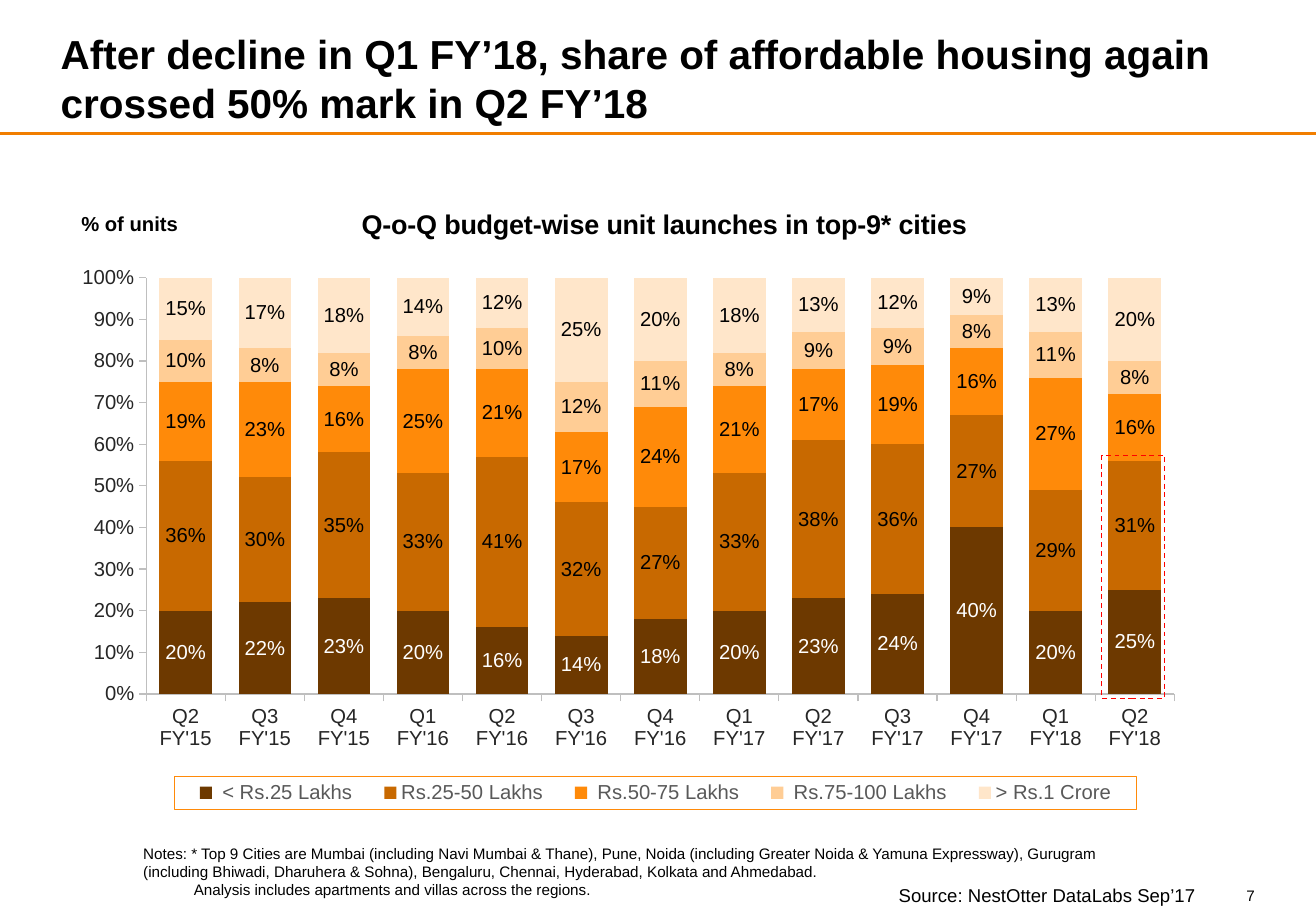
from lxml import etree
from pptx import Presentation
from pptx import util as u
from pptx.chart import data as chart_data
from pptx.dml.color import RGBColor
from pptx.enum import chart as charts, dml, shapes, text
from pptx.oxml import parse_xml
from pptx.oxml.ns import nsdecls, qn

COLORS = {
    "black": "000000", "white": "FFFFFF", "accent": "F17E00", "legend_line": "FF8A09",
    "axis_text": "262626", "axis_line": "BFBFBF", "legend_text": "595959", "highlight": "FF0000",
    "under_25": "6D3900", "from_25": "C86900", "from_50": "FF8A09", "from_75": "FFCD95", "crore": "FFE6CA",
}
QUARTERS = [f"Q{i % 4 + 1}\nFY'{15 + i // 4}" for i in range(1, 14)]
BUDGETS = [
    (" < Rs.25 Lakhs", "under_25", "white", [20, 22, 23, 20, 16, 14, 18, 20, 23, 24, 40, 20, 25]),
    ("Rs.25-50 Lakhs", "from_25", "black", [36, 30, 35, 33, 41, 32, 27, 33, 38, 36, 27, 29, 31]),
    (" Rs.50-75 Lakhs", "from_50", "black", [19, 23, 16, 25, 21, 17, 24, 21, 17, 19, 16, 27, 16]),
    (" Rs.75-100 Lakhs", "from_75", "black", [10, 8, 8, 8, 10, 12, 11, 8, 9, 9, 8, 11, 8]),
    ("> Rs.1 Crore", "crore", "black", [15, 17, 18, 14, 12, 25, 20, 18, 13, 12, 9, 13, 20]),
]
NOTES = [
    "Notes: * Top 9 Cities are Mumbai (including Navi Mumbai & Thane), Pune, Noida (including Greater Noida "
    "& Yamuna Expressway), Gurugram (including Bhiwadi, Dharuhera & Sohna), Bengaluru, Chennai, Hyderabad, "
    "Kolkata and Ahmedabad.",
    "Analysis includes apartments and villas across the regions.",
]


def rgb(name):
    """Return the named colour."""
    return RGBColor.from_string(COLORS[name])


def style_font(font, size, color="black", bold=False):
    """Format a font in the deck's typeface."""
    font.name, font.size, font.bold = "Arial", u.Pt(size), bold
    font.color.rgb = rgb(color)


def write(paragraph, content, size=12, color="black", bold=False, align=None, indent=0):
    """Write formatted text into a paragraph."""
    paragraph.text = content
    paragraph.alignment = align
    if indent:
        paragraph._p.get_or_add_pPr().set("indent", str(u.Pt(indent)))
    style_font(paragraph.runs[0].font, size, color, bold)


def place(element, inner=False, **box):
    """Give a chart part a manual layout in fractions of the chart."""
    for layout in element.findall(qn("c:layout")):
        element.remove(layout)
    target = '<c:layoutTarget val="inner"/>' if inner else ""
    modes = '<c:xMode val="edge"/><c:yMode val="edge"/>'
    sizes = "".join(f'<c:{key} val="{value}"/>' for key, value in box.items())
    layout = parse_xml(f'<c:layout {nsdecls("c")}><c:manualLayout>{target}{modes}{sizes}'
                       '</c:manualLayout></c:layout>')
    overlay = element.find(qn("c:overlay"))
    element.insert(0 if overlay is None else element.index(overlay), layout)


class SlideBuilder:
    """Hold the current slide and draw each kind of element on it."""

    def __init__(self, slide):
        """Keep the slide to draw on."""
        self.slide = slide

    def title(self, content, left, top, width, height):
        """Fill and move the title placeholder."""
        shape = self.slide.shapes.title
        shape.left, shape.top, shape.width, shape.height = map(u.Pt, (left, top, width, height))
        frame = shape.text_frame
        frame.word_wrap, frame.auto_size = True, text.MSO_AUTO_SIZE.NONE
        frame.vertical_anchor = text.MSO_ANCHOR.BOTTOM
        frame.margin_left = frame.margin_right = 0
        write(frame.paragraphs[0], content, size=24, bold=True, align=text.PP_ALIGN.LEFT)

    def text(self, lines, left, top, width, height, wrap=True, margin=None, indents=(0, 0), **style):
        """Add a text box with one paragraph per line."""
        frame = self.slide.shapes.add_textbox(*map(u.Pt, (left, top, width, height))).text_frame
        frame.word_wrap = wrap
        if margin is not None:
            frame.margin_left = frame.margin_right = frame.margin_top = frame.margin_bottom = u.Pt(margin)
        for index, line in enumerate(lines):
            paragraph = frame.add_paragraph() if index else frame.paragraphs[0]
            write(paragraph, line, indent=indents[index], **style)

    def rule(self, left, right, y):
        """Add a horizontal accent line."""
        line = self.slide.shapes.add_connector(
            shapes.MSO_CONNECTOR.STRAIGHT, *map(u.Pt, (left, y, right, y)))
        line.line.color.rgb, line.line.width = rgb("accent"), u.Pt(1.5)
        etree.SubElement(line._element.spPr, qn("a:effectLst"))

    def highlight(self, left, top, width, height):
        """Add a dashed frame."""
        shape = self.slide.shapes.add_shape(
            shapes.MSO_SHAPE.RECTANGLE, *map(u.Pt, (left, top, width, height)))
        shape.shadow.inherit = False
        shape.fill.background()
        shape.line.color.rgb, shape.line.width = rgb("highlight"), u.Pt(0.75)
        shape.line.dash_style = dml.MSO_LINE.DASH

    def chart(self, heading, categories, series_rows, left, top, width, height):
        """Add the stacked column chart."""
        data = chart_data.CategoryChartData(number_format="0%")
        data.categories = categories
        for name, _, _, values in series_rows:
            data.add_series(name, [value / 100 for value in values])
        chart = self.slide.shapes.add_chart(
            charts.XL_CHART_TYPE.COLUMN_STACKED, *map(u.Pt, (left, top, width, height)), data).chart
        style_font(chart.font, 10)
        chart.has_title = True
        write(chart.chart_title.text_frame.paragraphs[0], heading, size=16, bold=True)
        place(chart.chart_title._element, x=0.24, y=0.04)
        plot = chart.plots[0]
        plot.gap_width, plot.overlap, plot.vary_by_categories = 50, 100, False
        place(chart._chartSpace.chart.plotArea, inner=True, x=0.062, y=0.148, w=0.869, h=0.593)
        for series, (_, fill, label, _) in zip(plot.series, series_rows):
            series.format.fill.solid()
            series.format.fill.fore_color.rgb = rgb(fill)
            labels = series.data_labels
            labels.show_value, labels.position = True, charts.XL_LABEL_POSITION.CENTER
            labels.number_format, labels.number_format_is_linked = "0%", False
            style_font(labels.font, 12, label)
        for axis in (chart.category_axis, chart.value_axis):
            axis.has_major_gridlines = False
            axis.major_tick_mark = charts.XL_TICK_MARK.OUTSIDE
            axis.format.line.color.rgb, axis.format.line.width = rgb("axis_line"), u.Pt(0.75)
            style_font(axis.tick_labels.font, 12, "axis_text")
        axis = chart.value_axis
        axis.minimum_scale, axis.maximum_scale, axis.major_unit = 0, 1, 0.1
        axis.tick_labels.number_format, axis.tick_labels.number_format_is_linked = "0%", False
        self.legend(chart)

    def legend(self, chart):
        """Add the framed legend below the plot."""
        chart.has_legend = True
        legend = chart.legend
        legend.position, legend.include_in_layout = charts.XL_LEGEND_POSITION.BOTTOM, False
        style_font(legend.font, 12, "legend_text")
        place(legend._element, x=0.086, y=0.858, w=0.813, h=0.047)
        frame = parse_xml(
            f'<c:spPr {nsdecls("c", "a")}><a:ln w="{u.Pt(0.75)}"><a:solidFill>'
            f'<a:srgbClr val="{COLORS["legend_line"]}"/></a:solidFill></a:ln></c:spPr>')
        legend._element.find(qn("c:txPr")).addprevious(frame)


def main():
    """Build and save the slide."""
    presentation = Presentation()
    presentation.slide_width, presentation.slide_height = u.Pt(780), u.Pt(540)
    builder = SlideBuilder(presentation.slides.add_slide(presentation.slide_layouts[5]))
    builder.text(["7"], 728.6, 525.6, 15.1, 10.8, wrap=False, margin=0, size=9, align=text.PP_ALIGN.RIGHT)
    builder.rule(0, 780, 79.2)
    builder.text(["Source: NestOtter DataLabs Sep’17"], 525.6, 520.6, 247, 20.9, size=11)
    builder.chart("Q-o-Q budget-wise unit launches in top-9* cities", QUARTERS, BUDGETS,
                  43.2, 103, 701.3, 416.2)
    builder.title("After decline in Q1 FY’18, share of affordable housing again crossed 50% mark in Q2 FY’18",
                  36, 13, 707.8, 65.5)
    builder.text(["% of units"], 12.4, 121.7, 128.9, 21.6, bold=True, align=text.PP_ALIGN.CENTER)
    builder.text(NOTES, 77.8, 496.8, 608.4, 40.3, size=9, indents=(0, 30))
    builder.highlight(653, 270, 37.4, 144)
    presentation.save("out.pptx")


if __name__ == "__main__":
    main()
